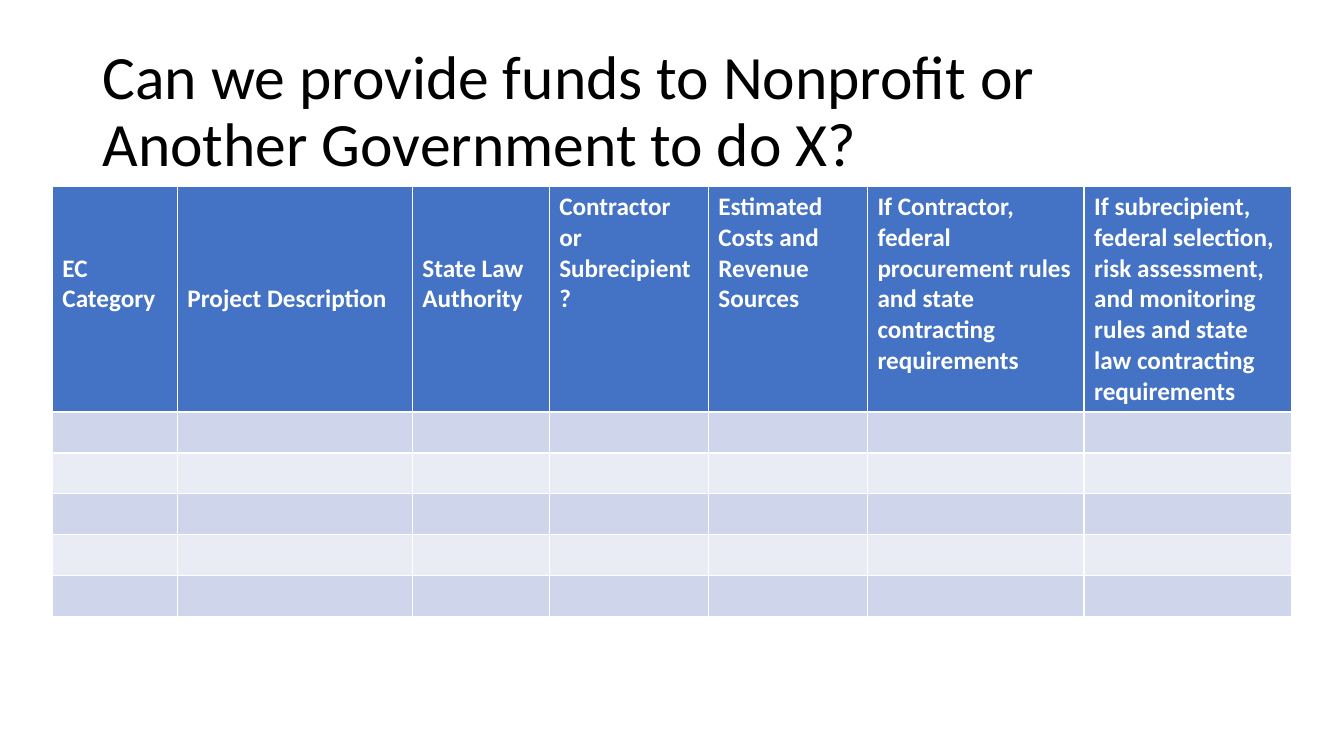
"""Build a slide with a planning table for funding nonprofits or governments."""
from pptx import Presentation
from pptx.dml.color import RGBColor
from pptx.enum.text import MSO_ANCHOR, MSO_AUTO_SIZE, PP_ALIGN
from pptx.util import Cm, Pt

MIDDLE = MSO_ANCHOR.MIDDLE
FIXED = MSO_AUTO_SIZE.NONE
LEFT = PP_ALIGN.LEFT

HEAD = "4472C4"
BANDS = ["E9EBF5", "CFD5EA"]
ROWS = 6
LINE = 0.774
COLUMNS = [
    ("EC Category", 3.15, 2),
    ("Project Description", 5.92, 3),
    ("State Law Authority", 3.45, 2),
    ("Contractor or Subrecipient?", 4.01, 0),
    ("Estimated Costs and Revenue Sources", 4.01, 0),
    ("If Contractor, federal procurement rules and state "
     "contracting requirements", 5.46, 0),
    ("If subrecipient, federal selection, risk assessment, and monitoring "
     "rules and state law contracting requirements", 5.23, 0),
]


def style(font, size, bold, color):
    values = {"name": "Calibri", "size": Pt(size), "bold": bold}
    for key, value in values.items():
        setattr(font, key, value)
    font.color.rgb = RGBColor.from_string(color)


def paint(cell, color):
    cell.fill.solid()
    cell.fill.fore_color.rgb = RGBColor.from_string(color)


deck = Presentation()
deck.slide_width, deck.slide_height = Cm(33.87), Cm(19.05)
slide = deck.slides.add_slide(deck.slide_layouts[5])

title = slide.shapes.title
place = {"left": 2.33, "top": 1.01, "width": 29.21, "height": 3.68}
for key, value in place.items():
    setattr(title, key, Cm(value))
frame = title.text_frame
frame.text = "Can we provide funds to Nonprofit or Another Government to do X?"
layout = {"word_wrap": True, "auto_size": FIXED, "vertical_anchor": MIDDLE}
for key, value in layout.items():
    setattr(frame, key, value)
para = frame.paragraphs[0]
para.alignment, para.line_spacing = LEFT, 0.9
style(para.runs[0].font, 44, False, "000000")

width = sum(column[1] for column in COLUMNS)
table = slide.shapes.add_table(
    ROWS, len(COLUMNS), Cm(1.32), Cm(4.7), Cm(width), Cm(10.74)).table
for index, row in enumerate(table.rows):
    row.height = Cm(1.03 if index else 5.67)
    for cell in row.cells:
        paint(cell, BANDS[index % 2] if index else HEAD)

for index, (text, wide, drop) in enumerate(COLUMNS):
    table.columns[index].width = Cm(wide)
    cell = table.cell(0, index)
    cell.text = text
    cell.margin_top = Cm(0.13 + drop * LINE)
    style(cell.text_frame.paragraphs[0].runs[0].font, 18, True, "FFFFFF")

deck.save("out.pptx")
